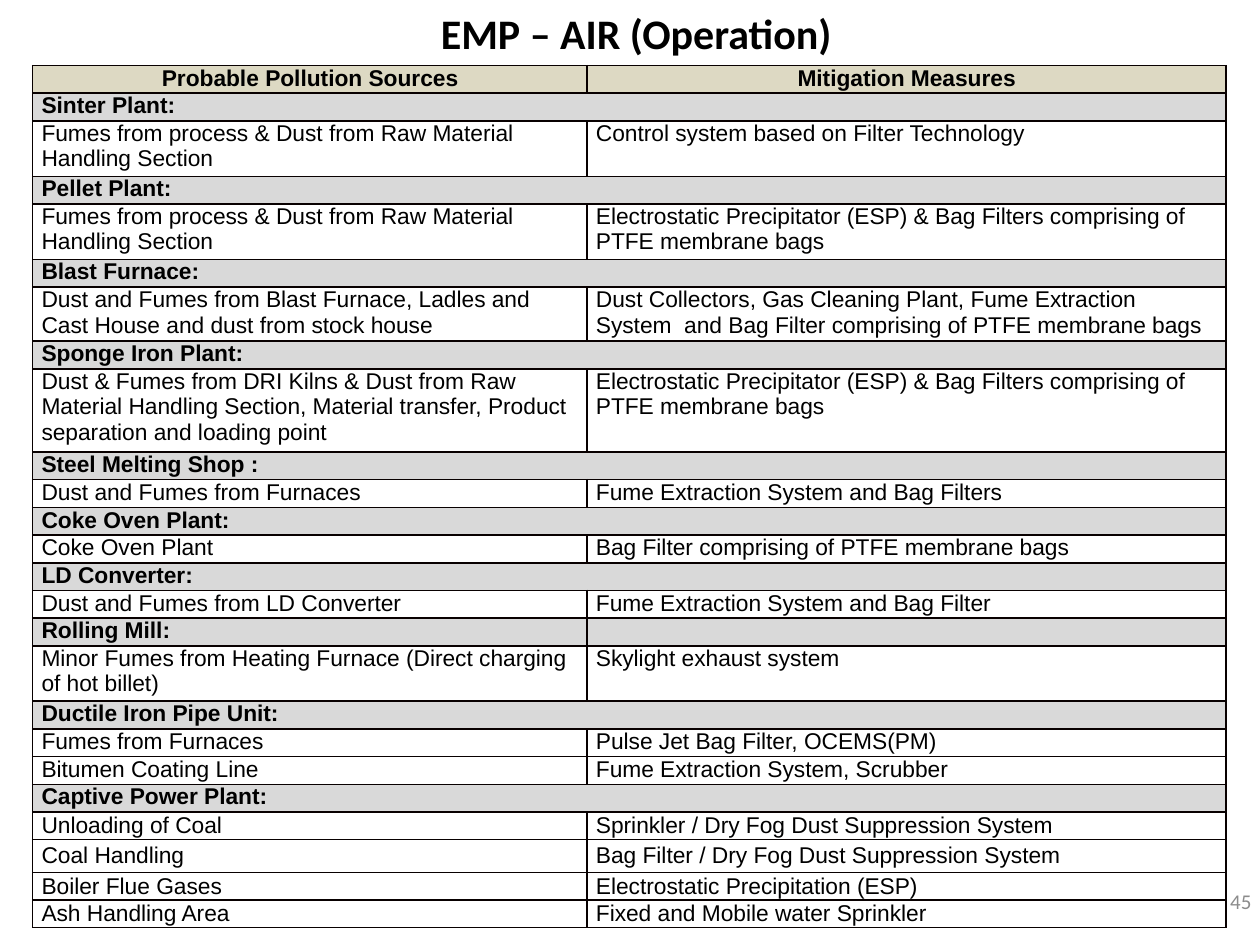
from lxml import etree
from pptx import Presentation
from pptx.dml.color import RGBColor
from pptx.enum.text import MSO_ANCHOR, PP_ALIGN
from pptx.oxml.ns import qn
from pptx.util import Inches, Pt

LEFT, CENTER, RIGHT = PP_ALIGN.LEFT, PP_ALIGN.CENTER, PP_ALIGN.RIGHT
TOP, MIDDLE = MSO_ANCHOR.TOP, MSO_ANCHOR.MIDDLE

COLORS = {"text": "000000", "line": "080000", "head": "DDD9C3",
          "group": "D9D9D9", "body": "FFFFFF", "page": "8C8C8C"}

HEAD = ("Probable Pollution Sources", "Mitigation Measures")
RAW = "Fumes from process & Dust from Raw Material Handling Section"
ESP = "Electrostatic Precipitator (ESP) & Bag Filters comprising of PTFE membrane bags"

# Plant, then (source, measure, row height)
PLANTS = [
    ("Sinter Plant:", [(RAW, "Control system based on Filter Technology", 0.44)]),
    ("Pellet Plant:", [(RAW, ESP, 0.44)]),
    ("Blast Furnace:", [
        ("Dust and Fumes from Blast Furnace, Ladles and Cast House and dust from stock house",
         "Dust Collectors, Gas Cleaning Plant, Fume Extraction System  and Bag Filter "
         "comprising of PTFE membrane bags", 0.43)]),
    ("Sponge Iron Plant:", [
        ("Dust & Fumes from DRI Kilns & Dust from Raw Material Handling Section, "
         "Material transfer, Product separation and loading point", ESP, 0.66)]),
    ("Steel Melting Shop :", [
        ("Dust and Fumes from Furnaces", "Fume Extraction System and Bag Filters", 0.22)]),
    ("Coke Oven Plant:", [
        ("Coke Oven Plant", "Bag Filter comprising of PTFE membrane bags", 0.22)]),
    ("LD Converter:", [
        ("Dust and Fumes from LD Converter", "Fume Extraction System and Bag Filter", 0.22)]),
    ("Rolling Mill:", [
        ("Minor Fumes from Heating Furnace (Direct charging of hot billet)",
         "Skylight exhaust system", 0.44)]),
    ("Ductile Iron Pipe Unit:", [
        ("Fumes from Furnaces", "Pulse Jet Bag Filter, OCEMS(PM)", 0.22),
        ("Bitumen Coating Line", "Fume Extraction System, Scrubber", 0.22)]),
    ("Captive Power Plant:", [
        ("Unloading of Coal", "Sprinkler / Dry Fog Dust Suppression System", 0.22),
        ("Coal Handling", "Bag Filter / Dry Fog Dust Suppression System", 0.26),
        ("Boiler Flue Gases", "Electrostatic Precipitation (ESP)", 0.22),
        ("Ash Handling Area", "Fixed and Mobile water Sprinkler", 0.22)]),
]
SPLIT = "Rolling Mill:"  # the one plant row whose two cells stay apart
MIDDLED = "Captive Power Plant:"


def rgb(name):
    return RGBColor.from_string(COLORS[name])


class Page:
    def __init__(self, slide):
        self.slide = slide

    def style(self, para, font, size, color="text", bold=False, align=LEFT):
        para.alignment = align
        para.font.name = font
        para.font.size = Pt(size)
        para.font.bold = bold
        para.font.color.rgb = rgb(color)

    def text(self, words, box, anchor=TOP, **look):
        shape = self.slide.shapes.add_textbox(*map(Inches, box))
        frame = shape.text_frame
        frame.word_wrap = True
        frame.vertical_anchor = anchor
        frame.text = words
        self.style(frame.paragraphs[0], "Calibri", **look)

    def border(self, cell):
        props = cell._tc.get_or_add_tcPr()
        for side in ("a:lnL", "a:lnR", "a:lnT", "a:lnB"):
            line = etree.SubElement(props, qn(side), w=str(Pt(1)))
            fill = etree.SubElement(line, qn("a:solidFill"))
            etree.SubElement(fill, qn("a:srgbClr"), val=COLORS["line"])

    def cell(self, cell, words, fill, anchor=TOP, **look):
        cell.margin_left = cell.margin_right = Inches(0.07)
        cell.margin_top = cell.margin_bottom = 0
        cell.vertical_anchor = anchor
        self.border(cell)
        cell.fill.solid()
        cell.fill.fore_color.rgb = rgb(fill)
        cell.text = words
        para = cell.text_frame.paragraphs[0]
        self.style(para, "Arial", 13, **look)
        if not words:  # keeps an empty cell from growing its row
            etree.SubElement(para._p, qn("a:endParaRPr"), sz="1300")

    def table(self, rows, box, widths):
        """Each row is (words, height, merged, look)."""
        frame = self.slide.shapes.add_table(len(rows), len(widths), *map(Inches, box))
        table = frame.table
        table.horz_banding = False
        for col, width in zip(table.columns, widths):
            col.width = Inches(width)
        for i, (words, height, merged, look) in enumerate(rows):
            table.rows[i].height = Inches(height)
            for j, word in enumerate(words):
                self.cell(table.cell(i, j), word, **look)
            if merged:
                table.cell(i, 0).merge(table.cell(i, len(widths) - 1))


def plan():
    """Lay the plants out as table rows."""
    rows = [(HEAD, 0.22, False, {"fill": "head", "bold": True, "align": CENTER})]
    for plant, items in PLANTS:
        rows.append(((plant, ""), 0.22, plant != SPLIT, {"fill": "group", "bold": True}))
        look = {"fill": "body", "anchor": MIDDLE if plant == MIDDLED else TOP}
        rows += [((source, measure), height, False, look)
                 for source, measure, height in items]
    return rows


def main():
    deck = Presentation()
    deck.slide_width, deck.slide_height = Inches(10), Inches(7.5)
    page = Page(deck.slides.add_slide(deck.slide_layouts[6]))
    page.table(plan(), (0.26, 0.52, 9.47, 6.82), (4.4, 5.07))
    page.text("EMP – AIR (Operation)", (2.07, 0.01, 5.96, 0.5),
              size=24, bold=True, align=CENTER)
    page.text("45", (7.78, 6.95, 2.25, 0.4), MIDDLE, size=12, color="page", align=RIGHT)
    deck.save("out.pptx")


if __name__ == "__main__":
    main()
